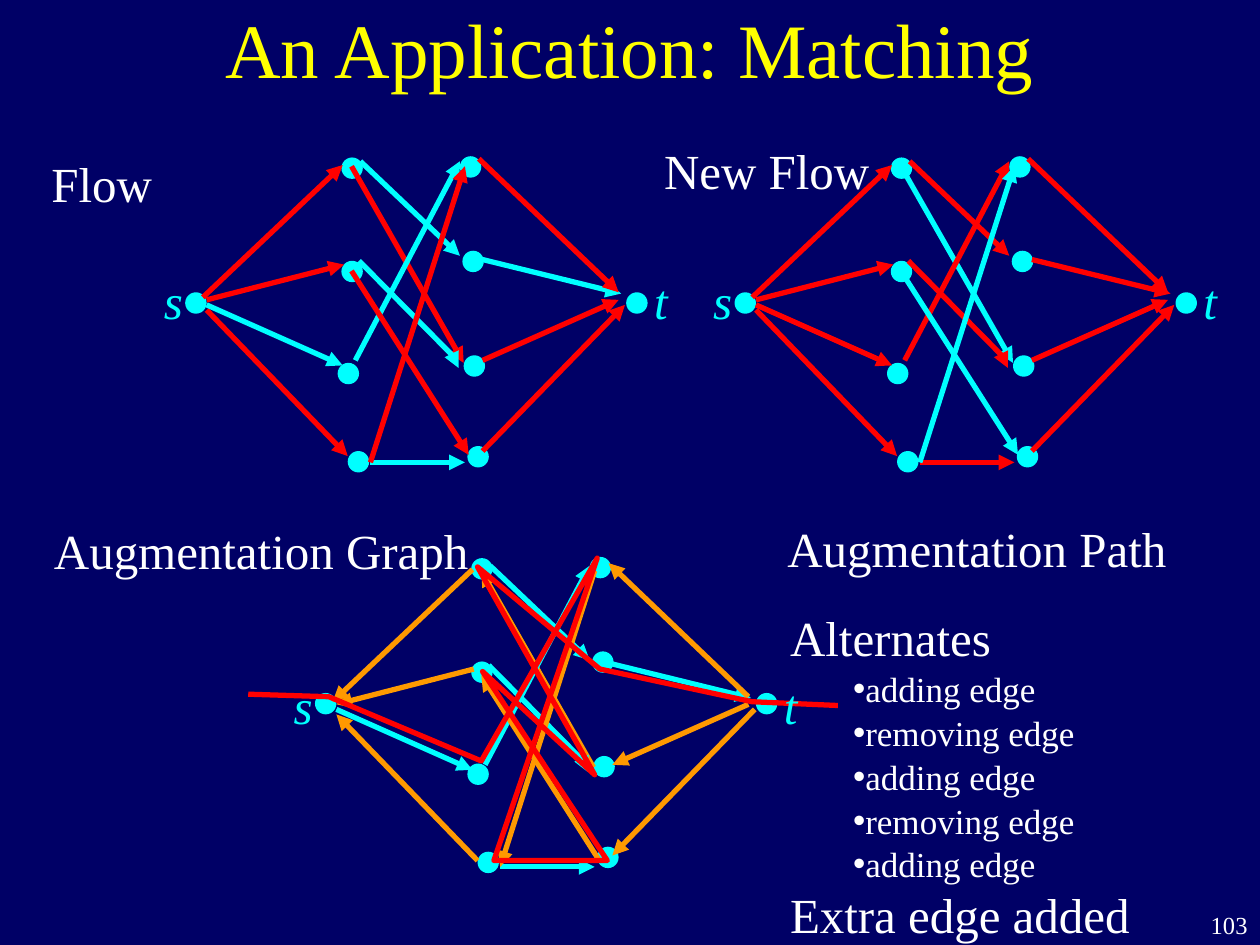
from lxml.etree import SubElement as Sub
from pptx import Presentation
from pptx.dml.color import RGBColor
from pptx.enum.shapes import MSO_CONNECTOR as Link, MSO_SHAPE as Form
from pptx.enum.text import MSO_ANCHOR as Anchor, MSO_AUTO_SIZE as Fit, PP_ALIGN as Align
from pptx.oxml.ns import qn
from pptx.util import Pt

PX = 9144  # 100 px to the inch
tint = RGBColor.from_string
NAVY, WHITE, YELLOW = "000066", "FFFFFF", "FFFF00"
CYAN, RED, ORANGE = "00FFFF", "FF0000", "FF9900"

deck = Presentation()
deck.slide_width, deck.slide_height = 1000 * PX, 750 * PX
slide = deck.slides.add_slide(deck.slide_layouts[1])
slide.background.fill.solid()
slide.background.fill.fore_color.rgb = tint(NAVY)
shapes = slide.shapes


def write(par, text, size, shade, slant=False):
    run = par.add_run()
    run.text = text
    run.font.name = "Times New Roman"
    run.font.size = Pt(size)
    run.font.italic = slant
    run.font.color.rgb = tint(shade)


def trace(points, shade, arrow=True):
    if len(points) == 2:
        ends = [n * PX for point in points for n in point]
        line = shapes.add_connector(Link.STRAIGHT, *ends)
    else:
        pen = shapes.build_freeform(*points[0], scale=PX)
        pen.add_line_segments(points[1:], close=False)
        line = pen.convert_to_shape()
        line.fill.background()
    line.line.color.rgb = tint(shade)
    line.line.width = Pt(3)
    props = line.element.spPr
    if arrow:
        Sub(props.find(qn("a:ln")), qn("a:tailEnd"), type="triangle")
    Sub(props, qn("a:effectLst"))


# Title
title = shapes.title
title.left, title.top, title.width, title.height = 0 + 75 * PX, -25 * PX, 850 * PX, 125 * PX
title.text_frame.vertical_anchor = Anchor.MIDDLE
par = title.text_frame.paragraphs[0]
par.alignment = Align.CENTER
write(par, "An Application: Matching", 44, YELLOW)

# Network: nodes, then edges running from s to t
dots = [(497, 232), (147, 232), (268, 288), (276, 358), (271, 207),
        (271, 125), (365, 124), (367, 199), (368, 282), (371, 354)]
edges = [
    [(279, 132), (368, 288)], [(285, 207), (365, 288), (364, 292)],
    [(282, 286), (365, 128)], [(294, 367), (369, 367)],
    [(286, 128), (365, 203)], [(279, 215), (372, 361)],
    [(294, 367), (369, 132)],
    [(164, 246), (276, 362)], [(164, 242), (272, 290)],
    [(164, 238), (273, 210)], [(161, 236), (272, 131)],
    [(383, 358), (496, 242)], [(383, 286), (491, 238)],
    [(383, 206), (493, 233)], [(380, 126), (491, 232)],
]
# One letter per edge: F carries flow, - is free
old = "F----FFF-FFFF-F"
new = "-FFFF--FFFFFFFF"

# Each graph: x shift, y shift of nodes and of edges, flow, flow colour, reversed
graphs = [(0, 0, 0, old, RED, False),
          (103, 318, 321, old, ORANGE, True),
          (436, 0, 0, new, RED, False)]
labels = [("Flow", 31, 117, 100, WHITE, Align.LEFT),
          ("Augmentation Graph", 33, 408, 349, WHITE, Align.LEFT),
          ("Augmentation Path", 615, 407, 321, WHITE, Align.LEFT),
          ("New Flow", 517, 107, 183, WHITE, Align.CENTER)]

for dx, drop, dy, flow, shade, back in graphs:
    for x, y in dots:
        dot = shapes.add_shape(Form.OVAL, (x + dx) * PX, (y + drop) * PX, 17 * PX, 17 * PX)
        dot.shadow.inherit = False
        dot.fill.solid()
        dot.fill.fore_color.rgb = tint(CYAN)
        dot.line.fill.background()
    for edge, mark in zip(edges, flow):
        points = [(x + dx, y + dy) for x, y in edge]
        used = mark == "F"
        trace(points[::-1] if used and back else points, shade if used else CYAN)
    labels += [("s", 120 + dx, 210 + dy, 35, CYAN, Align.CENTER),
               ("t", 509 + dx, 210 + dy, 31, CYAN, Align.CENTER)]

# Augmentation path
trace([(197, 551), (261, 553), (382, 604), (474, 443), (392, 683), (482, 683),
       (383, 533), (472, 615), (379, 450), (476, 531), (597, 557), (665, 560)],
      RED, arrow=False)

# Labels
for text, x, y, width, shade, side in labels:
    frame = shapes.add_textbox(x * PX, y * PX, width * PX, 57 * PX).text_frame
    frame.word_wrap = False
    frame.paragraphs[0].alignment = side
    write(frame.paragraphs[0], text, 28, shade, slant=shade == CYAN)

# Steps along the path
body = slide.placeholders[1]
body.left, body.top, body.width, body.height = 617 * PX, 477 * PX, 290 * PX, 270 * PX
frame = body.text_frame
frame.auto_size = Fit.NONE
frame.vertical_anchor = Anchor.TOP
steps = ["adding edge", "removing edge"] * 2 + ["adding edge"]
for i, text in enumerate(["Alternates", *steps, "Extra edge added"]):
    par = frame.add_paragraph() if i else frame.paragraphs[0]
    step = text in steps
    par.level = int(step)
    par.space_before = Pt(1 if step else 0)
    props = par._p.get_or_add_pPr()
    props.set("marL", str(50 * PX if step else 0))
    props.set("indent", "0")
    if step:
        Sub(props, qn("a:buChar"), char="•")
    else:
        Sub(props, qn("a:buNone"))
    write(par, text, 20 if step else 28, WHITE)

# Slide number
frame = shapes.add_textbox(950 * PX, 717 * PX, 50 * PX, 33 * PX).text_frame
frame.word_wrap = True
frame.paragraphs[0].alignment = Align.RIGHT
write(frame.paragraphs[0], "103", 14, WHITE)

deck.save("out.pptx")
